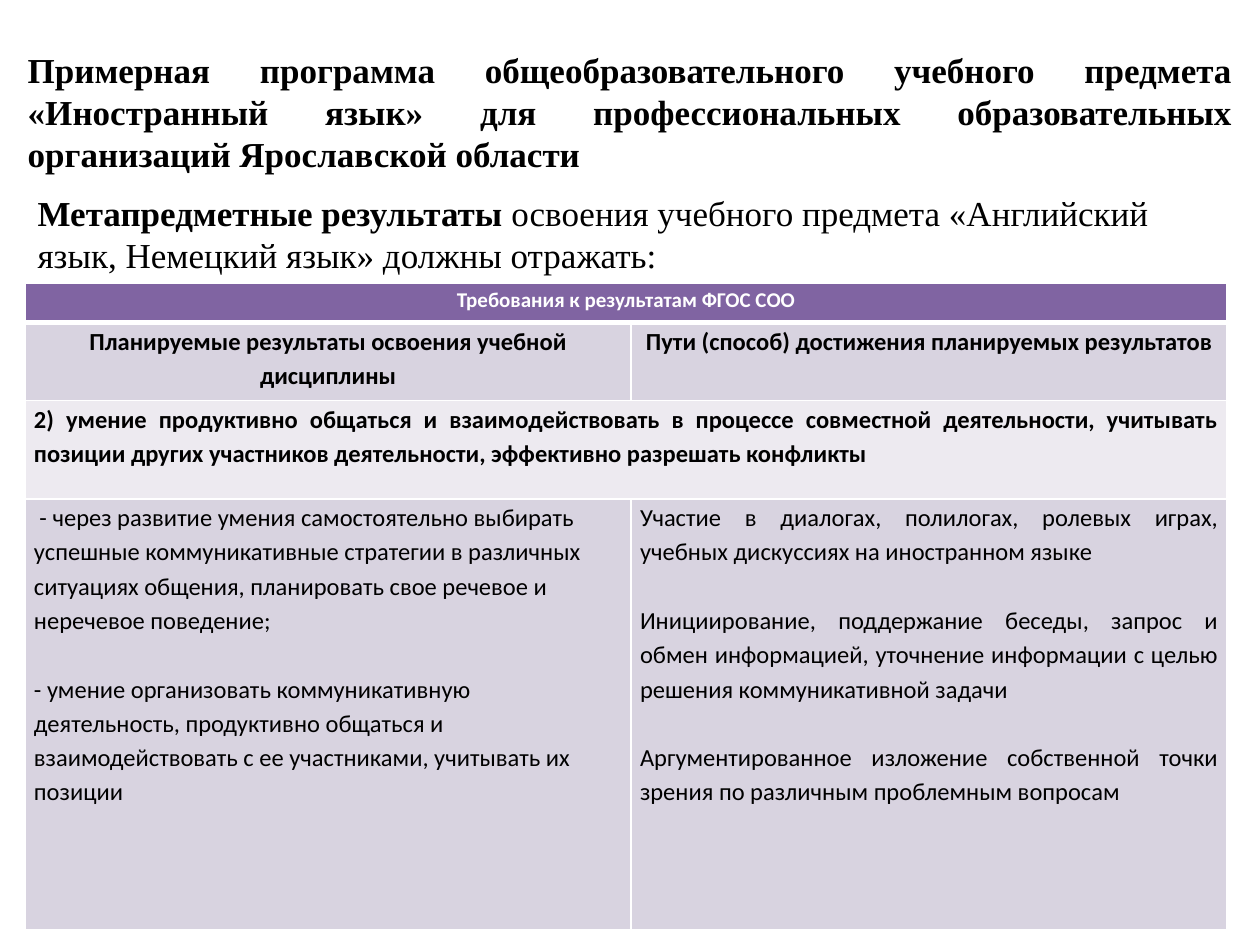
from lxml import etree
from pptx import Presentation
from pptx.dml.color import RGBColor
from pptx.enum import text
from pptx.oxml import ns
from pptx.util import Pt

BLACK = RGBColor(0x00, 0x00, 0x00)
WHITE = RGBColor(0xFF, 0xFF, 0xFF)
PURPLE = RGBColor(0x80, 0x64, 0xA2)
LILAC = RGBColor(0xD8, 0xD3, 0xE0)
PALE = RGBColor(0xED, 0xEA, 0xF0)

LEFT = text.PP_ALIGN.LEFT
CENTER = text.PP_ALIGN.CENTER
JUSTIFY = text.PP_ALIGN.JUSTIFY


class SlideBuilder:
    heading_font = "Times New Roman"
    table_font = "Calibri"
    heading_size = 20
    table_size = 14
    line_spacing = 1.15
    paragraph_gap = 19.6

    def __init__(self, slide):
        self.slide = slide

    def style(self, run, font, size, color=BLACK, bold=False):
        run.font.name = font
        run.font.size = Pt(size)
        run.font.color.rgb = color
        run.font.bold = bold

    def title(self, wording, left, top, width, height):
        title = self.slide.shapes.title
        title.left, title.top = Pt(left), Pt(top)
        title.width, title.height = Pt(width), Pt(height)
        frame = title.text_frame
        frame.text = wording
        frame.vertical_anchor = text.MSO_ANCHOR.MIDDLE
        frame.paragraphs[0].alignment = JUSTIFY
        self.style(frame.paragraphs[0].runs[0], self.heading_font, self.heading_size, bold=True)

    def lead(self, bold_part, plain_part, left, top, width, height):
        box = self.slide.shapes.add_textbox(Pt(left), Pt(top), Pt(width), Pt(height))
        box.text_frame.word_wrap = True
        paragraph = box.text_frame.paragraphs[0]
        for wording, bold in ((bold_part, True), (plain_part, False)):
            run = paragraph.add_run()
            run.text = wording
            self.style(run, self.heading_font, self.heading_size, bold=bold)

    def table(self, left, top, widths, heights):
        frame = self.slide.shapes.add_table(
            len(heights), len(widths), Pt(left), Pt(top), Pt(sum(widths)), Pt(sum(heights)))
        table = frame.table
        for column, width in zip(table.columns, widths):
            column.width = Pt(width)
        for row, height in zip(table.rows, heights):
            row.height = Pt(height)
        return table

    def borders(self, cell, bottom):
        properties = cell._tc.get_or_add_tcPr()
        for side, width in (("lnL", 1), ("lnR", 1), ("lnT", 1), ("lnB", bottom)):
            line = etree.SubElement(properties, ns.qn(f"a:{side}"), w=str(Pt(width)))
            fill = etree.SubElement(line, ns.qn("a:solidFill"))
            etree.SubElement(fill, ns.qn("a:srgbClr"), val=str(WHITE))

    def cell(self, cell, paragraphs, fill, align, bold=False, size=table_size,
             color=BLACK, after=0, bottom=1):
        self.borders(cell, bottom)
        cell.fill.solid()
        cell.fill.fore_color.rgb = fill
        cell.margin_left = cell.margin_right = Pt(5.04)
        cell.margin_top = cell.margin_bottom = Pt(0)
        cell.text_frame.text = "\n".join(paragraphs)
        for index, paragraph in enumerate(cell.text_frame.paragraphs):
            paragraph.alignment = align
            paragraph.line_spacing = self.line_spacing
            paragraph.space_before = Pt(self.paragraph_gap if index else 0)
            paragraph.space_after = Pt(after)
            for run in paragraph.runs:
                self.style(run, self.table_font, size, color, bold)


def main():
    deck = Presentation()
    deck.slide_width, deck.slide_height = Pt(720), Pt(540)
    builder = SlideBuilder(deck.slides.add_slide(deck.slide_layouts[5]))

    builder.title(
        "Примерная программа общеобразовательного учебного предмета «Иностранный язык» "
        "для профессиональных образовательных организаций Ярославской области",
        8.64, 21.6, 702.72, 84.24)
    builder.lead(
        "Метапредметные результаты ",
        "освоения учебного предмета «Английский язык, Немецкий язык» должны отражать:",
        14.4, 105.84, 691.92, 414)

    results = builder.table(14.4, 162, [346.32, 340.56], [22.32, 44.64, 56.16, 246.24])
    for row in (0, 2):
        results.cell(row, 0).merge(results.cell(row, 1))

    builder.cell(results.cell(0, 0), ["Требования к результатам ФГОС СОО"], PURPLE, CENTER,
                 bold=True, size=12, color=WHITE, bottom=3)

    column_heads = ["Планируемые результаты освоения учебной дисциплины",
                    "Пути (способ) достижения планируемых результатов"]
    for column, wording in enumerate(column_heads):
        builder.cell(results.cell(1, column), [wording], LILAC, CENTER, bold=True, after=10)

    builder.cell(results.cell(2, 0), [
        "2) умение продуктивно общаться и взаимодействовать в процессе совместной "
        "деятельности, учитывать позиции других участников деятельности, "
        "эффективно разрешать конфликты"], PALE, JUSTIFY, bold=True)

    builder.cell(results.cell(3, 0), [
        " - через развитие умения самостоятельно выбирать успешные коммуникативные "
        "стратегии в различных ситуациях общения, планировать свое речевое и "
        "неречевое поведение;",
        "- умение организовать коммуникативную деятельность, продуктивно общаться и "
        "взаимодействовать с ее участниками, учитывать их позиции"], LILAC, LEFT)
    builder.cell(results.cell(3, 1), [
        "Участие в диалогах, полилогах, ролевых играх, учебных дискуссиях на "
        "иностранном языке",
        "Инициирование, поддержание беседы, запрос и обмен информацией, уточнение "
        "информации с целью решения коммуникативной задачи",
        "Аргументированное изложение собственной точки зрения по различным "
        "проблемным вопросам"], LILAC, JUSTIFY)

    deck.save("out.pptx")


if __name__ == "__main__":
    main()
